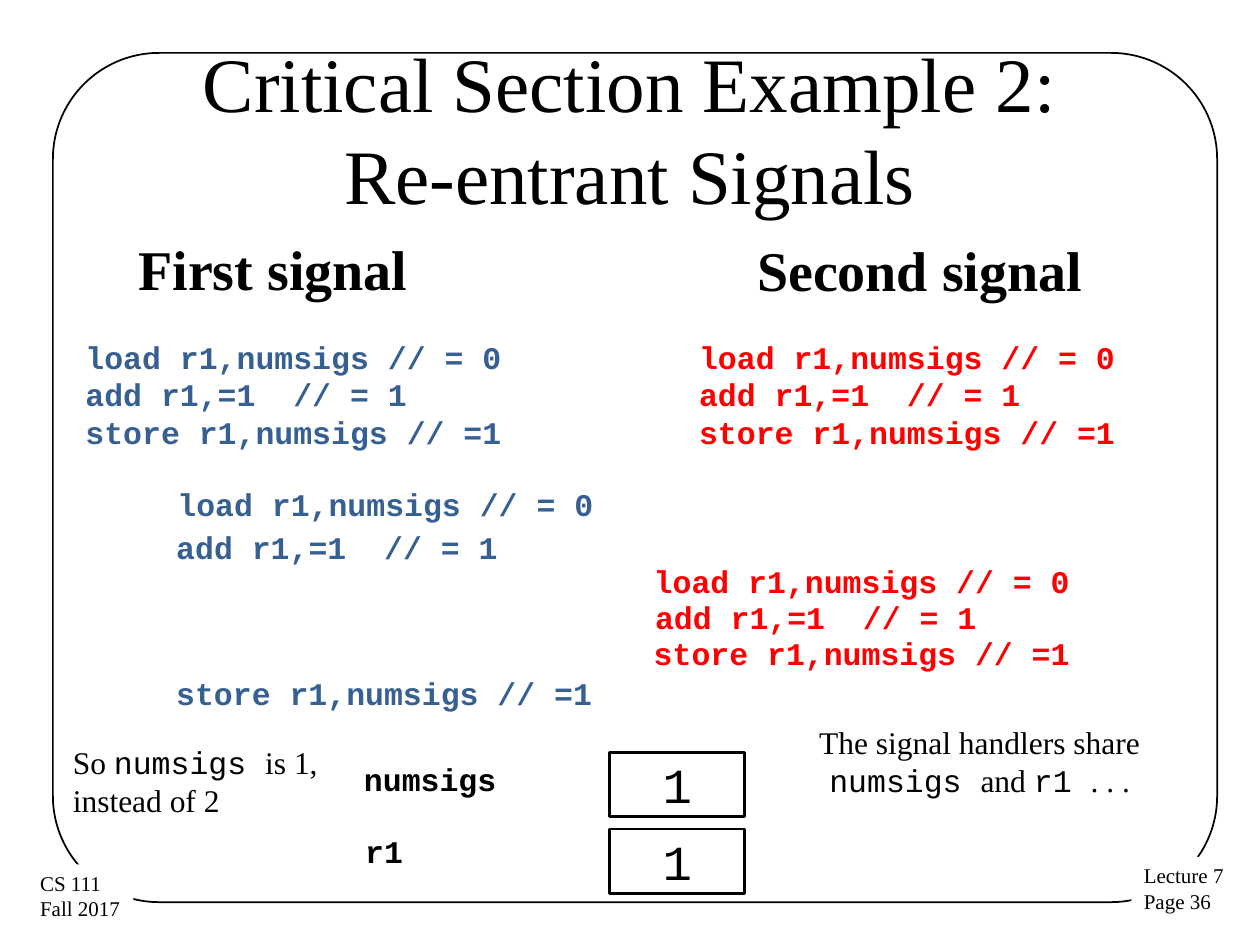
from pptx import Presentation
from pptx.dml.color import RGBColor
from pptx.enum.shapes import MSO_SHAPE
from pptx.enum.text import MSO_ANCHOR, MSO_AUTO_SIZE, PP_ALIGN
from pptx.util import Inches, Pt

ROUNDED = MSO_SHAPE.ROUNDED_RECTANGLE
RECTANGLE = MSO_SHAPE.RECTANGLE
MIDDLE = MSO_ANCHOR.MIDDLE
TOP = MSO_ANCHOR.TOP
NO_FIT = MSO_AUTO_SIZE.NONE
GROW = MSO_AUTO_SIZE.SHAPE_TO_FIT_TEXT
CENTER = PP_ALIGN.CENTER
LEFT = PP_ALIGN.LEFT

BLACK = RGBColor(0x00, 0x00, 0x00)
WHITE = RGBColor(0xFF, 0xFF, 0xFF)
BLUE = RGBColor(0x37, 0x60, 0x92)
RED = RGBColor(0xFF, 0x00, 0x00)
SERIF = "Times New Roman"
MONO = "Courier New"

LOAD = "load r1,numsigs // = 0"
ADD = "add r1,=1  // = 1"
STORE = "store r1,numsigs // =1"
CODE_WIDTH = 3.53
ADD_WIDTH = 2.78


def inches(box):
    return [Inches(value) for value in box]


def add_run(paragraph, text, size, font=SERIF, color=BLACK, bold=False):
    run = paragraph.add_run()
    run.text = text
    run.font.size = Pt(size)
    run.font.name = font
    run.font.bold = bold
    run.font.color.rgb = color


def add_lines(frame, lines, size, align=LEFT, **style):
    for index, line in enumerate(lines):
        paragraph = frame.add_paragraph() if index else frame.paragraphs[0]
        paragraph.alignment = align
        add_run(paragraph, line, size, **style)


def add_panel(slide, kind, box, fill=None, line_width=None):
    panel = slide.shapes.add_shape(kind, *inches(box))
    panel.shadow.inherit = False
    if fill is None:
        panel.fill.background()
    else:
        panel.fill.solid()
        panel.fill.fore_color.rgb = fill
    if line_width is None:
        panel.line.fill.background()
    else:
        panel.line.color.rgb = BLACK
        panel.line.width = Pt(line_width)
    return panel


def add_text(slide, box, lines, size, **style):
    frame = slide.shapes.add_textbox(*inches(box)).text_frame
    frame.word_wrap = False
    frame.auto_size = GROW
    add_lines(frame, lines, size, **style)


def add_code(slide, box, lines, color):
    add_text(slide, box, lines, 18, font=MONO, color=color, bold=True)


def add_border(slide, box):
    border = add_panel(slide, ROUNDED, box, line_width=1)
    border.adjustments[0] = 0.125


def add_corner_note(slide, box, lines):
    frame = add_panel(slide, RECTANGLE, box, fill=WHITE).text_frame
    frame.word_wrap = False
    frame.auto_size = GROW
    frame.vertical_anchor = TOP
    add_lines(frame, lines, 12)


def add_title(slide, box, lines):
    title = slide.shapes.title
    title.left, title.top, title.width, title.height = inches(box)
    slide.shapes.element.append(title.element)
    frame = title.text_frame
    frame.auto_size = NO_FIT
    frame.vertical_anchor = MIDDLE
    paragraph = frame.paragraphs[0]
    paragraph.alignment = CENTER
    for index, line in enumerate(lines):
        if index:
            paragraph.add_line_break()
        add_run(paragraph, line, 44)


def add_variable(slide, label_box, value_box, name, value):
    add_code(slide, label_box, [name], BLACK)
    cell = add_panel(slide, RECTANGLE, value_box, fill=WHITE, line_width=1.5)
    cell.text_frame.vertical_anchor = MIDDLE
    add_lines(cell.text_frame, [value], 28, align=CENTER, font=MONO)


def add_remark(slide, box, parts, align):
    frame = slide.shapes.add_textbox(*inches(box)).text_frame
    frame.word_wrap = True
    frame.auto_size = GROW
    paragraph = frame.paragraphs[0]
    paragraph.alignment = align
    for text, font in parts:
        add_run(paragraph, text, 18, font)


def main():
    deck = Presentation()
    deck.slide_width, deck.slide_height = Inches(10), Inches(7.5)
    slide = deck.slides.add_slide(deck.slide_layouts[5])

    add_border(slide, (0.42, 0.42, 9.24, 6.74))
    add_corner_note(slide, (8.98, 6.8, 0.84, 0.51), ["Lecture 7", "Page 36"])
    add_corner_note(slide, (0.22, 6.86, 0.84, 0.51), ["CS 111", "Fall 2017"])
    add_title(slide, (0.5, 0.39, 9, 1.25),
              ["Critical Section Example 2:", "Re-entrant Signals"])

    add_text(slide, (1, 1.81, 2.36, 0.64), ["First signal"], 32, bold=True)
    add_text(slide, (5.91, 1.82, 2.81, 0.64), ["Second signal"], 32, bold=True)

    for left, color in ((0.58, BLUE), (5.45, RED)):
        add_code(slide, (left, 2.63, CODE_WIDTH, 1.01), [LOAD, ADD, STORE], color)

    interleaving = [
        (1.31, 3.8, CODE_WIDTH, LOAD, BLUE),
        (1.3, 4.14, ADD_WIDTH, ADD, BLUE),
        (5.09, 4.41, CODE_WIDTH, LOAD, RED),
        (5.1, 4.7, ADD_WIDTH, ADD, RED),
        (5.09, 4.98, CODE_WIDTH, STORE, RED),
        (1.3, 5.3, CODE_WIDTH, STORE, BLUE),
    ]
    for left, top, width, instruction, color in interleaving:
        add_code(slide, (left, top, width, 0.4), [instruction], color)

    add_variable(slide, (2.79, 5.98, 1.62, 0.51), (4.84, 5.97, 1.07, 0.51),
                 "numsigs", "1")
    add_variable(slide, (2.8, 6.55, 0.61, 0.51), (4.84, 6.58, 1.07, 0.51),
                 "r1", "1")

    add_remark(slide, (6.22, 5.69, 3.11, 1.31),
               [("The signal handlers share ", SERIF), ("numsigs ", MONO),
                ("and ", SERIF), ("r1 ", MONO), (". . .", SERIF)], CENTER)
    add_remark(slide, (0.48, 5.85, 2.43, 0.91),
               [("So ", SERIF), ("numsigs ", MONO),
                ("is 1, instead of 2", SERIF)], LEFT)

    deck.save("out.pptx")


if __name__ == "__main__":
    main()
